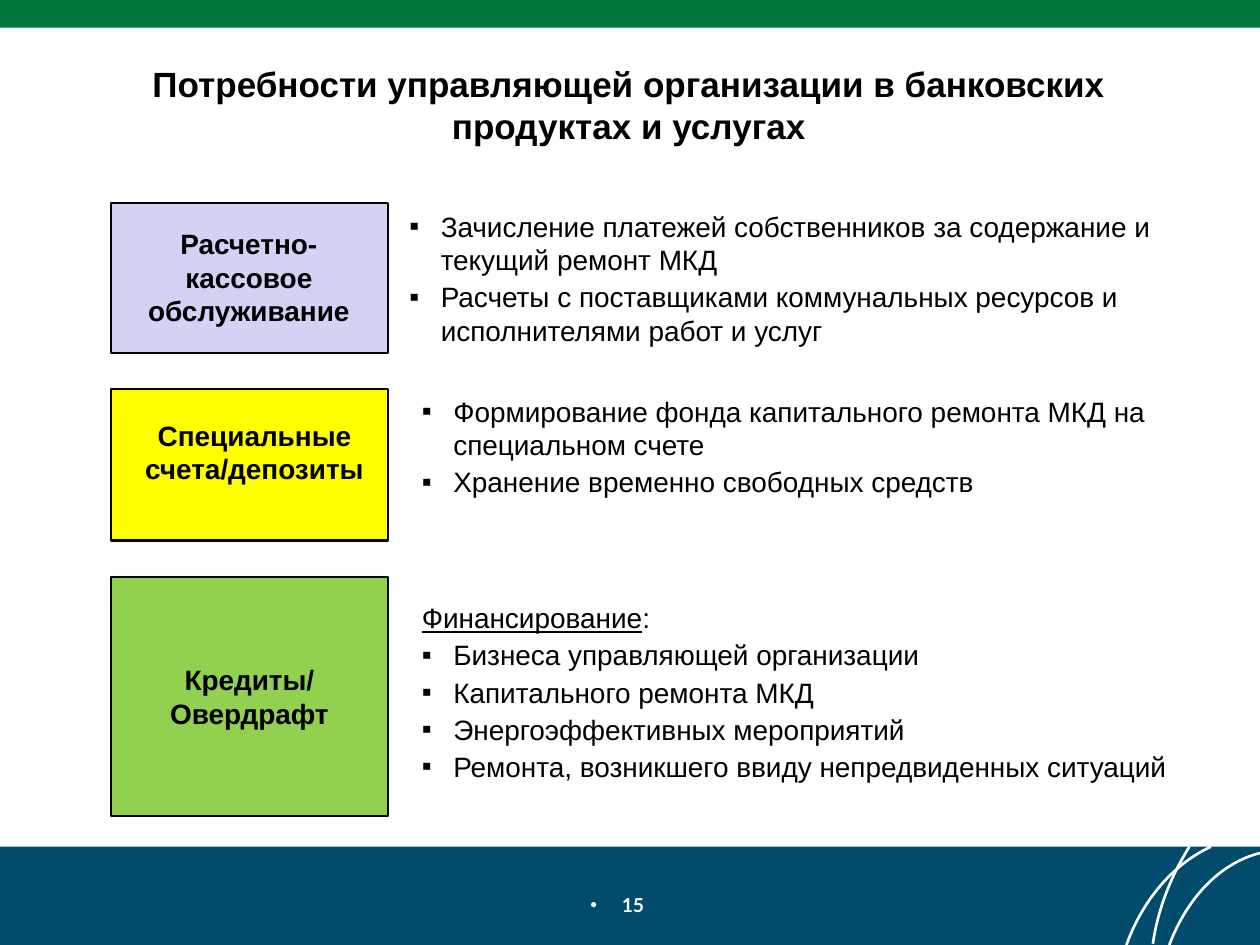
"""Build the slide on the banking needs of a managing organisation."""
from dataclasses import dataclass

from lxml import etree
from pptx import Presentation
from pptx.dml.color import RGBColor
from pptx.enum import shapes, text
from pptx.oxml import ns
from pptx.util import Inches, Pt

BLACK = RGBColor(0x00, 0x00, 0x00)
WHITE = RGBColor(0xFF, 0xFF, 0xFF)
GREEN = RGBColor(0x00, 0x78, 0x3C)
NAVY = RGBColor(0x01, 0x4C, 0x6D)
LILAC = RGBColor(0xD2, 0xD2, 0xF4)
YELLOW = RGBColor(0xFF, 0xFF, 0x00)
LIME = RGBColor(0x92, 0xD0, 0x50)

CARD_LEFT, CARD_WIDTH = 0.88, 2.2
HANG = 0.25
CURVE_STEPS = 24

Point = tuple[float, float]
Area = tuple[float, float, float, float]
Curve = tuple[Point, Point, Point, Point]


@dataclass(frozen=True)
class Need:
    top: float
    height: float
    color: RGBColor
    label: str
    label_area: Area
    list_area: Area
    items: tuple[str, ...]
    heading: str = ""


NEEDS = (
    Need(1.61, 1.19, LILAC, "Расчетно-кассовое обслуживание",
         (1.03, 1.75, 1.89, 0.91), (3.15, 1.61, 6.36, 1.21),
         ("Зачисление платежей собственников за содержание и текущий ремонт МКД",
          "Расчеты с поставщиками коммунальных ресурсов и исполнителями работ и услуг")),
    Need(3.09, 1.2, YELLOW, "Специальные счета/депозиты",
         (1, 3.27, 2.04, 0.64), (3.25, 3.08, 6.3, 0.94),
         ("Формирование фонда капитального ремонта МКД на специальном счете",
          "Хранение временно свободных средств")),
    Need(4.58, 1.9, LIME, "Кредиты/ Овердрафт",
         (1.1, 5.21, 1.76, 0.64), (3.25, 4.72, 6.27, 1.56),
         ("Бизнеса управляющей организации", "Капитального ремонта МКД",
          "Энергоэффективных мероприятий",
          "Ремонта, возникшего ввиду непредвиденных ситуаций"),
         "Финансирование"),
)

ARCS: tuple[tuple[Curve, ...], ...] = (
    (((9.61, 6.72), (9.31, 6.86), (9.07, 7.14), (8.94, 7.5)),),
    (((10, 6.77), (9.68, 6.85), (9.42, 7.13), (9.28, 7.5)),
     ((9.44, 6.72), (9.3, 6.94), (9.19, 7.21), (9.15, 7.49))),
)


def add_rectangle(page, area: Area, fill: RGBColor, outlined: bool = False) -> None:
    box = page.shapes.add_shape(shapes.MSO_SHAPE.RECTANGLE, *map(Inches, area))
    box.shadow.inherit = False
    box.fill.solid()
    box.fill.fore_color.rgb = fill
    if outlined:
        box.line.color.rgb = BLACK
        box.line.width = Pt(1.25)
    else:
        box.line.fill.background()


def curve_points(curve: Curve) -> list[tuple[int, int]]:
    points = []
    for step in range(CURVE_STEPS + 1):
        t = step / CURVE_STEPS
        weights = ((1 - t) ** 3, 3 * t * (1 - t) ** 2, 3 * t * t * (1 - t), t ** 3)
        x, y = (sum(w * p[axis] for w, p in zip(weights, curve)) for axis in (0, 1))
        points.append((Inches(x), Inches(y)))
    return points


def add_arcs(page, curves: tuple[Curve, ...]) -> None:
    first, *others = map(curve_points, curves)
    builder = page.shapes.build_freeform(*first[0])
    builder.add_line_segments(first[1:], close=False)
    for points in others:
        builder.move_to(*points[0])
        builder.add_line_segments(points[1:], close=False)
    arc = builder.convert_to_shape()
    arc.shadow.inherit = False
    arc.fill.background()
    arc.line.color.rgb = WHITE
    arc.line.width = Pt(1.5)


def add_text_frame(page, area: Area):
    frame = page.shapes.add_textbox(*map(Inches, area)).text_frame
    frame.word_wrap = True
    return frame


def add_run(para, words: str, size: float, bold: bool = False,
            color: RGBColor = BLACK, font: str = "Arial"):
    span = para.add_run()
    span.text = words
    span.font.name = font
    span.font.size = Pt(size)
    span.font.bold = bold
    span.font.color.rgb = color
    return span


def set_hanging(para, bullet: str = "") -> None:
    properties = para._p.get_or_add_pPr()
    properties.set("marL", str(Inches(HANG)))
    properties.set("indent", str(-Inches(HANG)))
    if bullet:
        etree.SubElement(properties, ns.qn("a:buFont"), typeface="Arial")
        etree.SubElement(properties, ns.qn("a:buChar"), char=bullet)


def add_centered(page, area: Area, words: str, size: float) -> None:
    para = add_text_frame(page, area).paragraphs[0]
    para.alignment = text.PP_ALIGN.CENTER
    add_run(para, words, size, bold=True)


def add_list(page, need: Need) -> None:
    frame = add_text_frame(page, need.list_area)
    lines = ((need.heading,) if need.heading else ()) + need.items
    for index, words in enumerate(lines):
        para = frame.add_paragraph() if index else frame.paragraphs[0]
        para.space_before = Pt(2)
        is_heading = words == need.heading
        set_hanging(para, "" if is_heading else "▪")
        span = add_run(para, words, 16)
        if is_heading:
            span.font.underline = True
            add_run(para, ":", 16)


def add_page_number(page) -> None:
    frame = add_text_frame(page, (3.97, 7.04, 2.06, 0.31))
    frame.margin_right = Inches(0.3)
    para = frame.paragraphs[0]
    para.alignment = text.PP_ALIGN.CENTER
    set_hanging(para, "•")
    add_run(para, "15", 11, bold=True, color=WHITE, font="Lato")


def main() -> None:
    deck = Presentation()
    deck.slide_width, deck.slide_height = Inches(10), Inches(7.5)
    page = deck.slides.add_slide(deck.slide_layouts[6])
    add_rectangle(page, (0, 6.72, 10, 0.78), NAVY)
    for curves in ARCS:
        add_arcs(page, curves)
    add_rectangle(page, (0, 0, 10, 0.22), GREEN)
    add_page_number(page)
    add_centered(page, (0.48, 0.45, 9.02, 0.77),
                 "Потребности управляющей организации в банковских продуктах и услугах", 20)
    for need in NEEDS:
        add_rectangle(page, (CARD_LEFT, need.top, CARD_WIDTH, need.height), need.color, True)
        add_centered(page, need.label_area, need.label, 16)
        add_list(page, need)
    deck.save("out.pptx")


if __name__ == "__main__":
    main()
